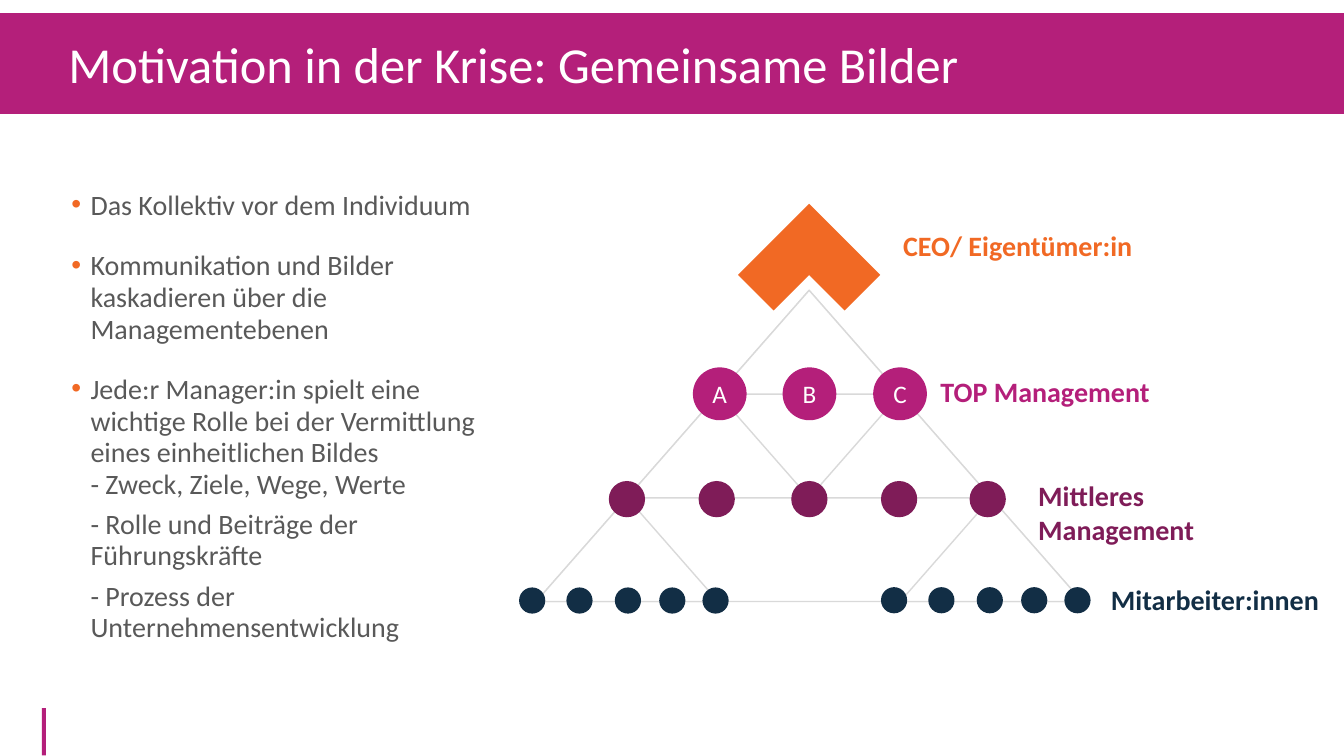
"""Build the slide on shared images as motivation in a crisis."""
from dataclasses import dataclass

from lxml.etree import SubElement
from pptx import Presentation
from pptx.dml.color import RGBColor
from pptx.enum.shapes import MSO_SHAPE
from pptx.enum.text import MSO_ANCHOR, PP_ALIGN
from pptx.oxml.ns import qn
from pptx.util import Pt

COLORS = {
    "magenta": "B41F7A", "plum": "7F1C58", "navy": "122E45", "orange": "F16924",
    "grey": "595959", "line": "D9D9D9", "white": "FFFFFF",
}
FONT = "Calibri"
INDENT = 13.7
PYRAMID_LEFT, PYRAMID_TOP = 383, 207.4
HALF_WIDTH, LEVEL = 65, 74.1


@dataclass
class Label:
    text: str
    left: float
    top: float
    width: float
    color: str


@dataclass
class Row:
    lefts: tuple[float, ...]
    top: float
    width: float
    height: float
    color: str
    letters: str = ""


@dataclass
class Point:
    text: str
    before: float
    bullet: bool


LABELS = [
    Label("CEO/ Eigentümer:in", 642.2, 162, 234, "orange"),
    Label("TOP Management", 668.9, 266.4, 225.4, "magenta"),
    Label("Mittleres Management", 738.7, 340.6, 188.6, "plum"),
    Label("Mitarbeiter:innen", 790.6, 414.7, 169.2, "navy"),
]
STAFF_LEFTS = (370.8, 404.6, 439.2, 470.9, 501.8)
ROWS = [
    Row((495.4, 559.5, 624.2), 262.9, 37.4, 36.8, "magenta", "ABC"),
    Row((434.9, 499, 565.2, 629.3, 692.6), 343.6, 25.9, 25.9, "plum"),
    Row(STAFF_LEFTS, 419.6, 18.7, 18.7, "navy"),
    Row(tuple(x + 258.5 for x in STAFF_LEFTS), 419.4, 18.7, 18.7, "navy"),
]
INNER_TRIANGLES = [(2, 0), (3, 1), (4, 2), (0, 2), (1, 1)]
ROOF = [(578, 145.6), (628.8, 196.4), (603.4, 221.8), (578, 196.4),
        (552.6, 221.8), (527.2, 196.4)]
POINTS = [
    Point("Das Kollektiv vor dem Individuum", 0, True),
    Point("Kommunikation und Bilder kaskadieren über die Managementebenen", 20.5, True),
    Point("Jede:r Manager:in spielt eine wichtige Rolle bei der Vermittlung "
          "eines einheitlichen Bildes\n- Zweck, Ziele, Wege, Werte", 20.5, True),
    Point("- Rolle und Beiträge der Führungskräfte", 6, False),
    Point("- Prozess der Unternehmensentwicklung", 6, False),
]


def rgb(name: str) -> RGBColor:
    return RGBColor.from_string(COLORS[name])


def style_shape(sp, fill: str | None, line: str | None) -> None:
    sp.shadow.inherit = False
    if fill:
        sp.fill.solid()
        sp.fill.fore_color.rgb = rgb(fill)
    else:
        sp.fill.background()
    if line:
        sp.line.color.rgb = rgb(line)
        sp.line.width = Pt(1)
    else:
        sp.line.fill.background()


def add_shape(s, kind, left: float, top: float, width: float, height: float,
              fill: str | None = None, line: str | None = None):
    sp = s.shapes.add_shape(kind, Pt(left), Pt(top), Pt(width), Pt(height))
    style_shape(sp, fill, line)
    return sp


def set_insets(tf, side: float, edge: float) -> None:
    tf.margin_left = tf.margin_right = Pt(side)
    tf.margin_top = tf.margin_bottom = Pt(edge)


def format_runs(p, size: float, color: str, bold: bool = False) -> None:
    for r in p.runs:
        r.font.name = FONT
        r.font.size = Pt(size)
        r.font.bold = bold
        r.font.color.rgb = rgb(color)


def add_text(s, left: float, top: float, width: float, height: float):
    tf = s.shapes.add_textbox(Pt(left), Pt(top), Pt(width), Pt(height)).text_frame
    tf.word_wrap = True
    return tf


def add_label(s, label: Label) -> None:
    tf = add_text(s, label.left, label.top, label.width, 26.6)
    set_insets(tf, 2.9, 1.4)
    tf.text = label.text
    format_runs(tf.paragraphs[0], 20, label.color, True)


def add_row(s, row: Row) -> None:
    for i, left in enumerate(row.lefts):
        line = row.color if row.letters else None
        sp = add_shape(s, MSO_SHAPE.OVAL, left, row.top, row.width, row.height,
                       row.color, line)
        if row.letters:
            tf = sp.text_frame
            set_insets(tf, 0, 0)
            tf.word_wrap = False
            tf.vertical_anchor = MSO_ANCHOR.MIDDLE
            tf.text = row.letters[i]
            p = tf.paragraphs[0]
            p.alignment = PP_ALIGN.CENTER
            format_runs(p, 18, "white")


def add_points(s, points: list[Point]) -> None:
    tf = add_text(s, 43.9, 131.8, 329, 339)
    for i, point in enumerate(points):
        p = tf.add_paragraph() if i else tf.paragraphs[0]
        p.text = point.text
        p.line_spacing = Pt(22.6)
        p.space_before = Pt(point.before)
        pPr = p._p.get_or_add_pPr()
        pPr.set("marL", str(Pt(INDENT)))
        if point.bullet:
            pPr.set("indent", str(-Pt(INDENT)))
            color = SubElement(pPr, qn("a:buClr"))
            SubElement(color, qn("a:srgbClr"), val=COLORS["orange"])
            SubElement(pPr, qn("a:buFont"), typeface="Arial")
            SubElement(pPr, qn("a:buChar"), char="•")
        format_runs(p, 20, "grey")


def add_title(s, text: str) -> None:
    add_shape(s, MSO_SHAPE.RECTANGLE, 0, 9.4, 960, 72, "magenta")
    tf = add_text(s, 41.8, 25.9, 871.9, 46.1)
    tf.vertical_anchor = MSO_ANCHOR.MIDDLE
    tf.text = text
    p = tf.paragraphs[0]
    p.line_spacing = 0.8
    format_runs(p, 36, "white")


def add_roof(s) -> None:
    corners = [(Pt(x), Pt(y)) for x, y in ROOF]
    builder = s.shapes.build_freeform(*corners[0])
    builder.add_line_segments(corners[1:], close=True)
    style_shape(builder.convert_to_shape(), "orange", None)


def add_pyramid(s) -> None:
    add_roof(s)
    add_shape(s, MSO_SHAPE.ISOSCELES_TRIANGLE, PYRAMID_LEFT, PYRAMID_TOP,
              6 * HALF_WIDTH, 3 * LEVEL, line="line")
    for column, level in INNER_TRIANGLES:
        add_shape(s, MSO_SHAPE.ISOSCELES_TRIANGLE, PYRAMID_LEFT + column * HALF_WIDTH,
                  PYRAMID_TOP + level * LEVEL, 2 * HALF_WIDTH, LEVEL, "white", "line")
    for row in ROWS:
        add_row(s, row)
    for label in LABELS:
        add_label(s, label)


def main() -> None:
    prs = Presentation()
    prs.slide_width, prs.slide_height = Pt(960), Pt(540)
    s = prs.slides.add_slide(prs.slide_layouts[6])
    add_shape(s, MSO_SHAPE.RECTANGLE, 29.9, 505.8, 2.9, 33.8, "magenta")
    add_title(s, "Motivation in der Krise: Gemeinsame Bilder")
    add_pyramid(s)
    add_points(s, POINTS)
    prs.save("out.pptx")


if __name__ == "__main__":
    main()
